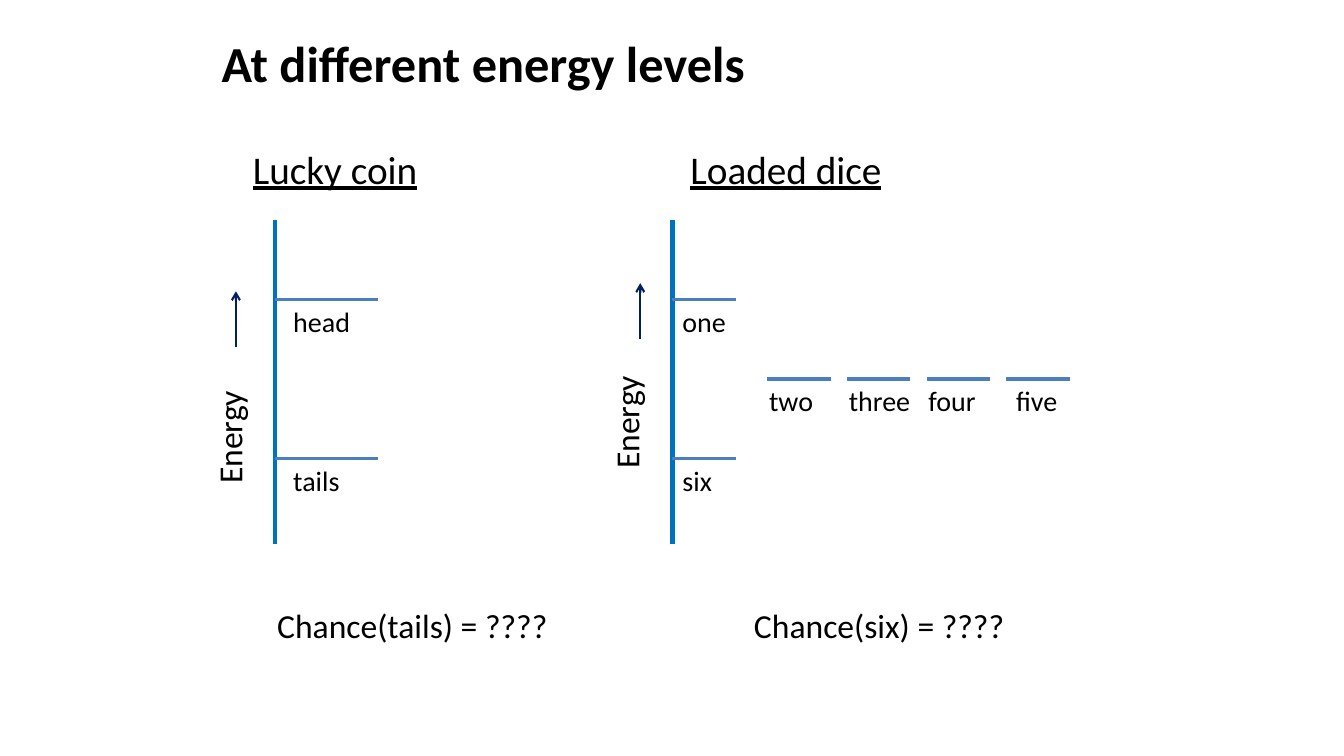
from collections import namedtuple

from pptx import Presentation
from pptx.dml.color import RGBColor
from pptx.enum.shapes import MSO_CONNECTOR as Connector
from pptx.enum.text import MSO_ANCHOR as Anchor
from pptx.oxml.ns import qn
from pptx.util import Inches, Pt
from lxml.etree import SubElement

STEP = 0.79
AXIS_LENGTH = 3.22
Box = namedtuple("Box", "left top width height")
Level = namedtuple("Level", "label left rank width label_shift label_width")

TITLE = {"size": Pt(36), "bold": True}
HEADING = {"size": Pt(28), "underline": True}
BODY = {"size": Pt(24)}
LABEL = {"size": Pt(20)}

COIN = {
    "heading": "Lucky coin", "heading_shift": -0.32, "heading_width": 2.52,
    "energy_drop": 1.41, "arrow_shift": -0.39, "arrow_drop": 1.26,
    "question": "Chance(tails) = ????", "question_shift": -0.08, "question_width": 3.31,
    "levels": [Level("head", 0, 1, 1.02, 0.08, 0.81),
               Level("tails", 0, 3, 1.02, 0.08, 0.79)],
}
MIDDLE_LABELS = [("two", -0.08, 0.87), ("three", -0.08, 0.87),
                 ("four", -0.08, 0.71), ("five", 0, 0.63)]
DICE = {
    "heading": "Loaded dice", "heading_shift": 0.08, "heading_width": 4.57,
    "energy_drop": 1.26, "arrow_shift": -0.32, "arrow_drop": 1.18,
    "question": "Chance(six) = ????", "question_shift": 0.71, "question_width": 3.94,
    "levels": [Level("one", 0, 1, 0.63, 0, 0.87), Level("six", 0, 3, 0.63, 0, 0.79)]
    + [Level(label, 0.15 + STEP * column, 2, 0.63, shift, width)
       for column, (label, shift, width) in enumerate(MIDDLE_LABELS, 1)],
}


def colour(value):
    """Turn a hex string into a colour."""
    return RGBColor.from_string(value)


def add_text(page, box, words, style, anchor=Anchor.TOP, upward=False):
    """Write one paragraph in a text box."""
    frame = page.shapes.add_textbox(*map(Inches, box)).text_frame
    frame.word_wrap = True
    frame.vertical_anchor = anchor
    if upward:
        frame._txBody.bodyPr.set("vert", "vert270")
    span = frame.paragraphs[0].add_run()
    span.text = words
    span.font.color.rgb = colour("000000")
    for name, value in {"name": "Calibri", **style}.items():
        setattr(span.font, name, value)


def add_line(page, start, end, shade, weight, arrow=False):
    """Draw a straight line, with an open arrowhead if asked."""
    line = page.shapes.add_connector(Connector.STRAIGHT, *map(Inches, start + end))
    line.line.color.rgb = colour(shade)
    line.line.width = Pt(weight)
    if arrow:
        SubElement(line.line._get_or_add_ln(), qn("a:tailEnd"), type="arrow")
    SubElement(line._element.spPr, qn("a:effectLst"))


def add_level(page, left, top, level):
    """Draw one energy level with its label below."""
    add_line(page, (left, top), (left + level.width, top), "4B7EBC", 2.25)
    box = Box(left + level.label_shift, top, level.label_width, 0.44)
    add_text(page, box, level.label, LABEL)


def add_diagram(page, box, content):
    """Place heading, energy axis, levels and question around the box of the axis."""
    left, top = box.left, box.top
    heading = Box(left + content["heading_shift"], top - STEP, content["heading_width"], 0.57)
    add_text(page, heading, content["heading"], HEADING)
    add_line(page, (left, top), (left, top + box.height), "0070C0", 3)
    energy = Box(left - 0.71, top + content["energy_drop"], 0.61, 1.31)
    add_text(page, energy, "Energy", BODY, upward=True)
    arrow_left, arrow_base = left + content["arrow_shift"], top + content["arrow_drop"]
    add_line(page, (arrow_left, arrow_base), (arrow_left, arrow_base - 0.55),
             "002060", 1.5, arrow=True)
    for level in content["levels"]:
        add_level(page, left + level.left, top + STEP * level.rank, level)
    question = Box(left + content["question_shift"], top + box.height + 0.55,
                   content["question_width"], 0.5)
    add_text(page, question, content["question"], BODY)


def main():
    """Build and save the slide."""
    deck = Presentation()
    deck.slide_width, deck.slide_height = Inches(13.33), Inches(7.5)
    page = deck.slides.add_slide(deck.slide_layouts[6])
    add_text(page, Box(2.1, 0, 8.99, 1.24), "At different energy levels", TITLE, Anchor.MIDDLE)
    add_diagram(page, Box(2.73, 2.18, 1.02, AXIS_LENGTH), COIN)
    add_diagram(page, Box(6.67, 2.18, 3.93, AXIS_LENGTH), DICE)
    deck.save("out.pptx")


if __name__ == "__main__":
    main()
